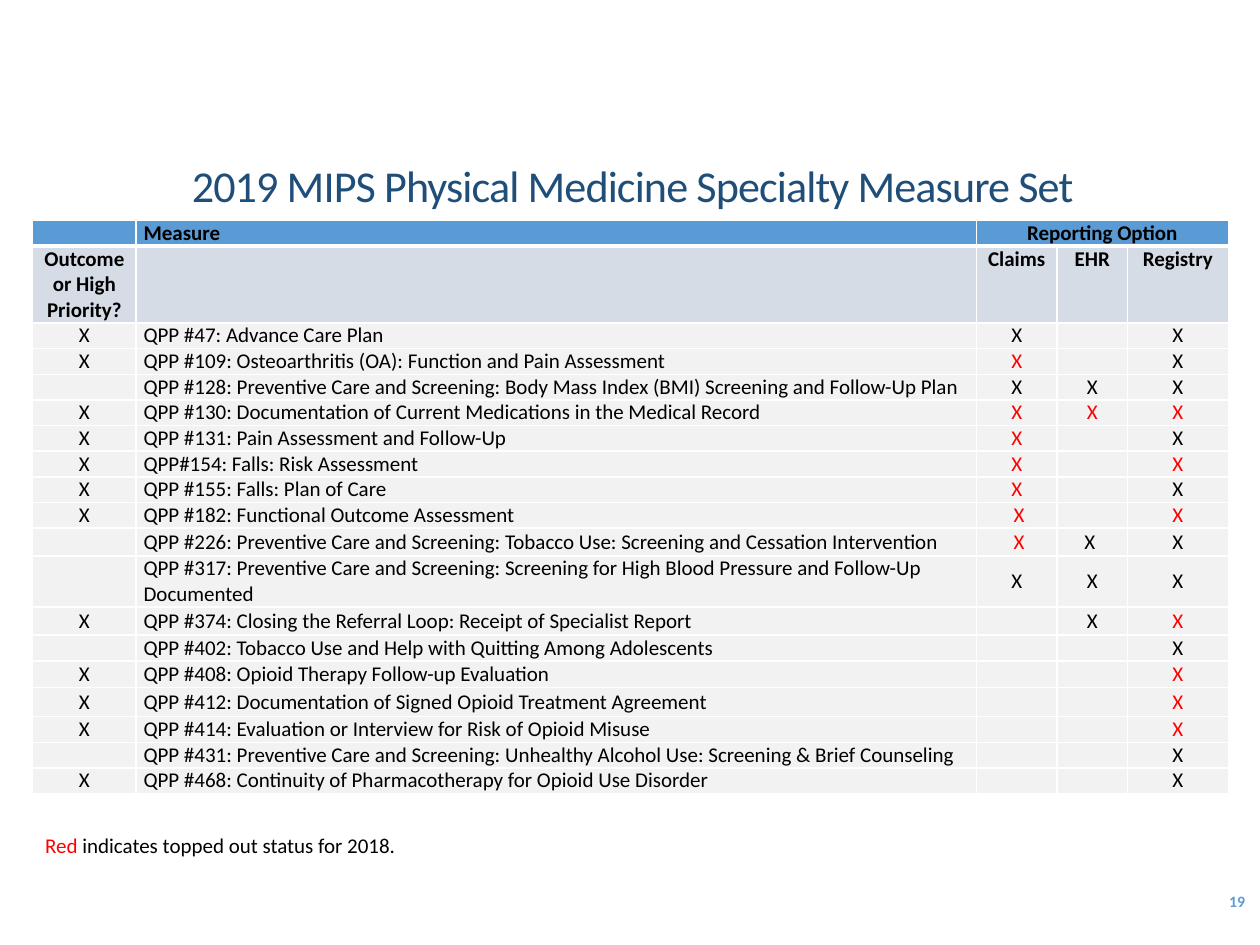
from dataclasses import dataclass

from lxml import etree
from pptx import Presentation
from pptx.dml.color import RGBColor
from pptx.enum import text
from pptx.oxml.ns import qn
from pptx.util import Inches, Pt


@dataclass(frozen=True)
class Theme:
    font: str = "Calibri"
    title: str = "1F4E79"
    accent: str = "5B9BD5"
    subhead: str = "D6DCE5"
    body: str = "F2F2F2"
    ink: str = "000000"
    red: str = "FF0000"
    grid: str = "FFFFFF"
    title_pt: float = 25.2
    text_pt: float = 12
    number_pt: float = 9


THEME = Theme()
LEFT, CENTER, RIGHT = (text.PP_ALIGN.LEFT, text.PP_ALIGN.CENTER,
                       text.PP_ALIGN.RIGHT)
TOP, MIDDLE = text.MSO_ANCHOR.TOP, text.MSO_ANCHOR.MIDDLE

COLUMN_WIDTHS = [0.82, 6.67, 0.64, 0.56, 0.8]
HEADER_HEIGHT, SUBHEAD_HEIGHT, LINE_HEIGHT = 0.2, 0.6, 0.2
HEADER = ["", "Measure", "Reporting Option", "", ""]
SUBHEAD = ["Outcome or High Priority?", "", "Claims", "EHR", "Registry"]

# Outcome or high priority, measure, claims, EHR, registry, row height.
# A leading * marks a topped out (red) entry.
MEASURES = [
    ("X", "QPP #47: Advance Care Plan", "X", "", "X", LINE_HEIGHT),
    ("X", "QPP #109: Osteoarthritis (OA): Function and Pain Assessment",
     "*X", "", "X", LINE_HEIGHT),
    ("", "QPP #128: Preventive Care and Screening: Body Mass Index (BMI) "
     "Screening and Follow-Up Plan", "X", "X", "X", LINE_HEIGHT),
    ("X", "QPP #130: Documentation of Current Medications in the Medical "
     "Record", "*X", "*X", "*X", LINE_HEIGHT),
    ("X", "QPP #131: Pain Assessment and Follow-Up", "*X", "", "X",
     LINE_HEIGHT),
    ("X", "QPP#154: Falls: Risk Assessment", "*X", "", "*X", LINE_HEIGHT),
    ("X", "QPP #155: Falls: Plan of Care", "*X", "", "X", LINE_HEIGHT),
    ("X", "QPP #182: Functional Outcome Assessment", "* X", "", "*X",
     LINE_HEIGHT),
    ("", "QPP #226: Preventive Care and Screening: Tobacco Use: Screening "
     "and Cessation Intervention", "* X", "X ", "X", 0.22),
    ("", "QPP #317: Preventive Care and Screening: Screening for High Blood "
     "Pressure and Follow-Up Documented", "X", "X", "X", 0.4),
    ("X", "QPP #374: Closing the Referral Loop: Receipt of Specialist Report",
     "", "X", "*X", 0.22),
    ("", "QPP #402: Tobacco Use and Help with Quitting Among Adolescents",
     "", "", "X", 0.21),
    ("X", "QPP #408: Opioid Therapy Follow-up Evaluation", "", "", "*X",
     0.21),
    ("X", "QPP #412: Documentation of Signed Opioid Treatment Agreement",
     "", "", "*X", 0.23),
    ("X", "QPP #414: Evaluation or Interview for Risk of Opioid Misuse",
     "", "", "*X", LINE_HEIGHT),
    ("", "QPP #431: Preventive Care and Screening: Unhealthy Alcohol Use: "
     "Screening & Brief Counseling", "", "", "X", LINE_HEIGHT),
    ("X", "QPP #468: Continuity of Pharmacotherapy for Opioid Use Disorder",
     "", "", "X", LINE_HEIGHT),
]


def add_run(p, words, size, color, bold=False):
    r = p.add_run()
    r.text = words
    r.font.name = THEME.font
    r.font.size = Pt(size)
    r.font.bold = bold
    r.font.color.rgb = RGBColor.from_string(color)
    return r


def set_borders(cell, top=1, bottom=1):
    """Draw grid lines round a cell; call before setting its fill."""
    tc_pr = cell._tc.get_or_add_tcPr()
    for side, width in (("L", 1), ("R", 1), ("T", top), ("B", bottom)):
        ln = etree.SubElement(tc_pr, qn(f"a:ln{side}"), w=str(Pt(width)))
        fill = etree.SubElement(ln, qn("a:solidFill"))
        etree.SubElement(fill, qn("a:srgbClr"), val=THEME.grid)


def fill_cell(cell, words, fill, align, anchor, bold, borders):
    set_borders(cell, **borders)
    cell.fill.solid()
    cell.fill.fore_color.rgb = RGBColor.from_string(fill)
    cell.margin_left = cell.margin_right = Inches(0.06)
    cell.margin_top = cell.margin_bottom = 0
    cell.vertical_anchor = anchor
    p = cell.text_frame.paragraphs[0]
    p.alignment = align
    if words:
        color = THEME.red if words.startswith("*") else THEME.ink
        add_run(p, words.removeprefix("*"), THEME.text_pt, color, bold)
    else:
        # Keeps an empty cell from stretching its row.
        etree.SubElement(p._p, qn("a:endParaRPr"),
                         sz=str(int(THEME.text_pt * 100)))


def fill_row(table, index, values, height, fill, anchor=TOP, bold=True,
             **borders):
    table.rows[index].height = Inches(height)
    for column, words in enumerate(values):
        align = LEFT if column == 1 else CENTER
        fill_cell(table.cell(index, column), words, fill, align, anchor,
                  bold, borders)


def add_measure_table(s):
    heights = [HEADER_HEIGHT, SUBHEAD_HEIGHT] + [m[-1] for m in MEASURES]
    frame = s.shapes.add_table(len(heights), len(COLUMN_WIDTHS),
                               Inches(0.26), Inches(1.75),
                               Inches(sum(COLUMN_WIDTHS)),
                               Inches(sum(heights)))
    table = frame.table
    for column, width in zip(table.columns, COLUMN_WIDTHS):
        column.width = Inches(width)
    fill_row(table, 0, HEADER, HEADER_HEIGHT, THEME.accent, bottom=3)
    fill_row(table, 1, SUBHEAD, SUBHEAD_HEIGHT, THEME.subhead, top=3)
    for index, (*values, height) in enumerate(MEASURES, start=2):
        fill_row(table, index, values, height, THEME.body, MIDDLE, False)
    table.cell(0, 2).merge(table.cell(0, 4))


def add_title(s, words):
    title = s.shapes.title
    title.left, title.top = Inches(0.5), Inches(1.29)
    title.width, title.height = Inches(9.04), Inches(0.46)
    tf = title.text_frame
    tf.auto_size = text.MSO_AUTO_SIZE.NONE
    tf.vertical_anchor = TOP
    p = tf.paragraphs[0]
    p.alignment = CENTER
    p.line_spacing = 0.8
    r = add_run(p, words, THEME.title_pt, THEME.title)
    r.font._element.set("spc", "-50")


def add_text(s, left, top, width, height, runs, align=LEFT, anchor=TOP):
    """Add a one-line text box; runs are (words, size, color, bold)."""
    box = s.shapes.add_textbox(Inches(left), Inches(top), Inches(width),
                               Inches(height))
    tf = box.text_frame
    tf.word_wrap = True
    tf.vertical_anchor = anchor
    p = tf.paragraphs[0]
    p.alignment = align
    for run in runs:
        add_run(p, *run)


def main():
    prs = Presentation()
    prs.slide_width, prs.slide_height = Inches(10), Inches(7.5)
    s = prs.slides.add_slide(prs.slide_layouts[5])
    add_measure_table(s)
    add_title(s, "2019 MIPS Physical Medicine Specialty Measure Set")
    add_text(s, 8.72, 6.95, 1.26, 0.4,
             [("19", THEME.number_pt, THEME.accent, True)], RIGHT, MIDDLE)
    add_text(s, 0.26, 6.56, 6.23, 0.3,
             [("Red", THEME.text_pt, THEME.red),
              (" indicates topped out status for 2018.", THEME.text_pt,
               THEME.ink)])
    prs.save("out.pptx")


if __name__ == "__main__":
    main()
